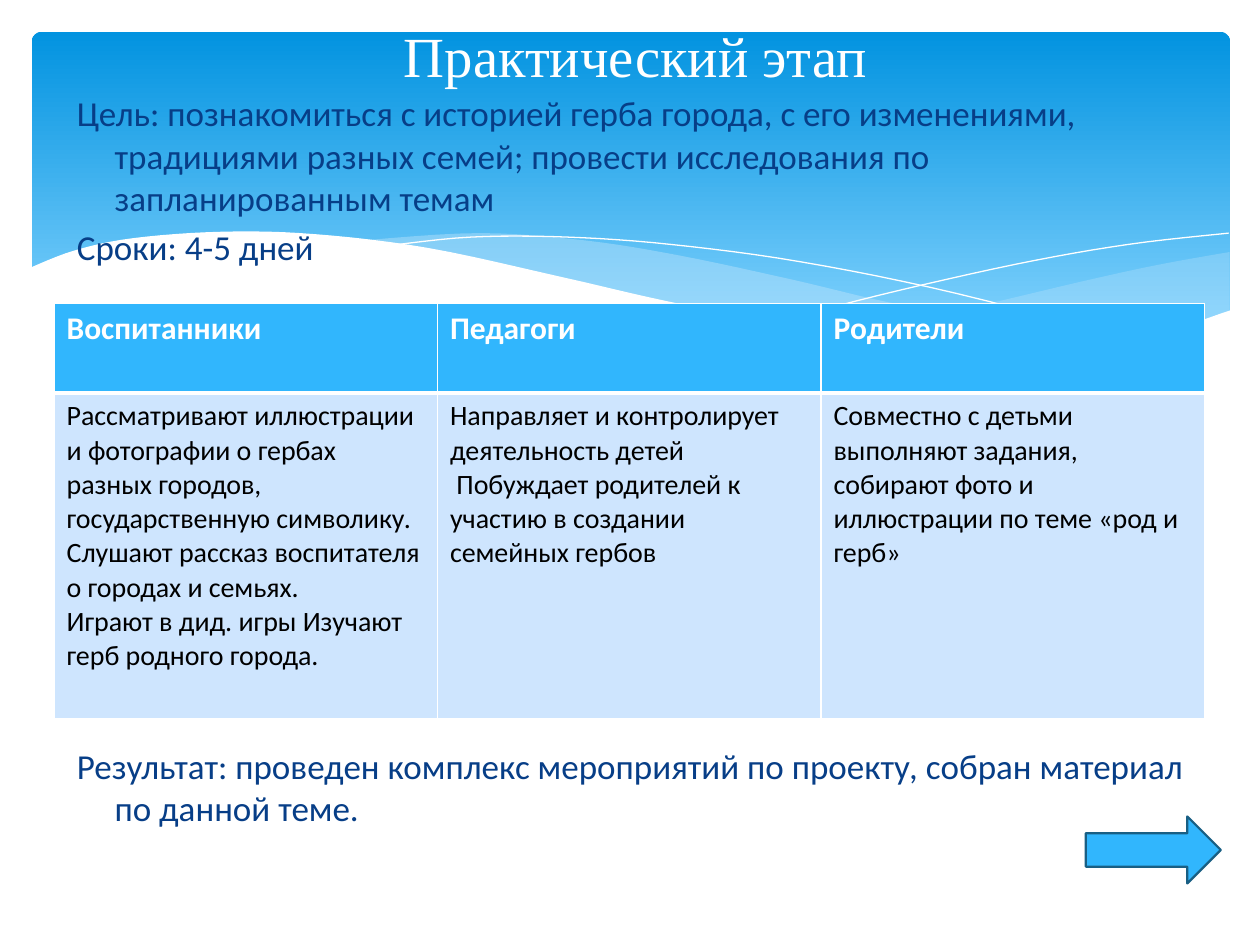
from lxml import etree
from pptx import Presentation
from pptx import util as u
from pptx.dml.color import RGBColor
from pptx.enum import shapes, text
from pptx.oxml.ns import qn

TITLE = "Практический этап"
GOALS = [
    "Цель: познакомиться с историей герба города, с его изменениями, традициями "
    "разных семей; провести исследования по запланированным темам",
    "Сроки: 4-5 дней",
]
RESULT = ["Результат: проведен комплекс мероприятий по проекту, "
          "собран материал по данной теме."]
ROLES = {
    "Воспитанники": [
        "Рассматривают иллюстрации и фотографии о гербах разных городов, "
        "государственную символику. Слушают рассказ воспитателя о городах и семьях.",
        "Играют в дид. игры Изучают герб родного города.",
    ],
    "Педагоги": [
        "Направляет и контролирует деятельность детей",
        " Побуждает родителей к участию в создании семейных гербов",
    ],
    "Родители": [
        "Совместно с детьми выполняют задания, собирают фото и иллюстрации "
        "по теме «род и герб»",
    ],
}
THEME = {
    "white": "FFFFFF", "black": "000000", "navy": "073E87",
    "accent": "31B6FD", "accent_dark": "195F84", "cell": "CEE5FE", "wave": "C6E7FC",
    "band_top": "0293E0", "band_bottom": "83D3FE",
    "title_font": "Times New Roman", "body_font": "Calibri",
    "title_size": 32.4, "body_size": 20, "header_size": 18, "cell_size": 16,
}

# Lengths in cm. Every wave is a chain of edges; each edge is a smooth curve.
BAND = (0.64, 0.64, 24.16, 6.86)
TITLE_BOX = (1.5, 0.41, 22.63, 2.39)
GOALS_BOX = (1.3, 1.73, 23.01, 4.2)
RESULT_BOX = (1.3, 14.89, 23.01, 2.2)
TABLE_BOX = (1.09, 6.12, 23.19, 8.36)
ROW_HEIGHTS = (1.8, 6.56)
ARROW = (21.89, 16.46, 2.72, 1.35)
HANGING = 0.76
WAVES = [
    {"fill": "wave", "alpha": 29, "edges": [
        [(24.79, 5.08), (23.39, 5.33), (21.87, 5.66), (19.13, 6.3), (16.79, 6.73)],
        [(16.79, 6.73), (17.91, 6.88), (19.53, 7.04), (20.93, 7.04), (22.38, 6.93),
         (23.75, 6.65), (24.79, 6.27)]]},
    {"fill": "wave", "alpha": 40, "edges": [
        [(22.68, 6.93), (20.5, 6.6), (17.93, 6.1), (15.98, 5.64), (13.74, 5.16),
         (11.81, 4.85), (9.65, 4.7), (7.26, 4.85)],
        [(7.26, 4.85), (9.19, 5.16), (11.4, 5.64), (14.38, 6.3), (16.89, 6.76),
         (19, 7.01), (20.78, 7.06), (22.68, 6.93)]]},
    {"line": "white", "edges": [
        [(7.85, 4.95), (9.5, 4.78), (11.43, 4.78), (13.54, 4.93), (16.15, 5.28),
         (19.3, 5.92), (23.04, 6.91)]]},
    {"line": "white", "edges": [
        [(15.57, 6.53), (17.65, 5.97), (20.47, 5.33), (22.73, 4.93), (24.77, 4.7)]]},
    {"fill": "white", "edges": [
        [(24.82, 6.25), (23.11, 6.78), (20.9, 7.04), (18.44, 6.91), (15.9, 6.55),
         (13.44, 6.07), (11.35, 5.59), (8.64, 5), (6.35, 4.72), (4.5, 4.67),
         (2.69, 4.8), (1.5, 5.05), (0.58, 5.41)],
        [(0.58, 8.36), (24.82, 8.36)]]},
]


def color(name):
    return RGBColor.from_string(THEME[name])


def cm(box):
    return [u.Cm(length) for length in box]


def set_values(target, values):
    for name, value in values.items():
        setattr(target, name, value)


def paint(shape, fill=None, line=None, width=0):
    shape.shadow.inherit = False
    if fill:
        shape.fill.solid()
        shape.fill.fore_color.rgb = color(fill)
    else:
        shape.fill.background()
    if line:
        shape.line.color.rgb = color(line)
        shape.line.width = u.Pt(width)
    else:
        shape.line.fill.background()


def write(frame, lines, font, size, ink, bold=False, **paragraph_format):
    for index, line in enumerate(lines):
        paragraph = frame.add_paragraph() if index else frame.paragraphs[0]
        run = paragraph.add_run()
        run.text = line
        set_values(run.font, {"name": THEME[font], "size": u.Pt(THEME[size]), "bold": bold})
        run.font.color.rgb = color(ink)
        set_values(paragraph, paragraph_format)


def smooth(points, steps=6):
    """Catmull-Rom curve through the points."""
    padded = [points[0], *points, points[-1]]
    curve = [points[0]]
    for a, b, c, d in zip(padded, padded[1:], padded[2:], padded[3:]):
        for step in range(1, steps + 1):
            t = step / steps
            curve.append(tuple(
                (2 * q + (r - p) * t + (2 * p - 5 * q + 4 * r - s) * t ** 2
                 + (3 * q - p - 3 * r + s) * t ** 3) / 2
                for p, q, r, s in zip(a, b, c, d)))
    return curve


def add_band(slide):
    band = slide.shapes.add_shape(shapes.MSO_SHAPE.ROUNDED_RECTANGLE, *cm(BAND))
    band.adjustments[0] = 0.03
    paint(band)
    band.fill.gradient()
    band.fill.gradient_angle = 270
    for stop, name, position in zip(band.fill.gradient_stops,
                                    ("band_top", "band_bottom"), (0, 0.9)):
        stop.color.rgb = color(name)
        stop.position = position


def add_wave(slide, edges, fill=None, line=None, alpha=100):
    points = [cm(point) for edge in edges for point in smooth(edge)]
    builder = slide.shapes.build_freeform(*points[0])
    builder.add_line_segments(points[1:], close=bool(fill))
    wave = builder.convert_to_shape()
    paint(wave, fill, line)
    if alpha < 100:
        ink = wave.fill._xPr.find(".//" + qn("a:srgbClr"))
        etree.SubElement(ink, qn("a:alpha"), val=str(alpha * 1000))


def add_body(slide, box, lines):
    frame = slide.shapes.add_textbox(*cm(box)).text_frame
    frame.word_wrap = True
    write(frame, lines, "body_font", "body_size", "navy")
    for index, paragraph in enumerate(frame.paragraphs):
        paragraph.space_before = u.Pt(4 if index else 0)
        properties = paragraph._p.get_or_add_pPr()
        properties.set("marL", str(u.Cm(HANGING)))
        properties.set("indent", str(-u.Cm(HANGING)))


def add_title(slide):
    title = slide.shapes.title
    set_values(title, dict(zip(("left", "top", "width", "height"), cm(TITLE_BOX))))
    set_values(title.text_frame, {
        "margin_top": 0, "word_wrap": True, "auto_size": text.MSO_AUTO_SIZE.NONE,
        "vertical_anchor": text.MSO_ANCHOR.TOP})
    write(title.text_frame, [TITLE], "title_font", "title_size", "white",
          alignment=text.PP_ALIGN.CENTER)
    slide.shapes._spTree.append(title._element)  # bring in front of the band


def set_borders(cell, widths):
    properties = cell._tc.get_or_add_tcPr()
    for index, (side, width) in enumerate(widths.items()):
        border = etree.Element(qn("a:ln" + side), w=str(u.Pt(width)))
        fill = etree.SubElement(border, qn("a:solidFill"))
        etree.SubElement(fill, qn("a:srgbClr"), val=THEME["white"])
        properties.insert(index, border)


def add_roles(slide):
    table = slide.shapes.add_table(2, len(ROLES), *cm(TABLE_BOX)).table
    set_values(table, {"first_row": False, "horz_banding": False})
    for row, height in zip(table.rows, ROW_HEIGHTS):
        row.height = u.Cm(height)
    for column, (role, tasks) in enumerate(ROLES.items()):
        table.columns[column].width = u.Cm(TABLE_BOX[2] / len(ROLES))
        styles = [([role], "header_size", "white", True, "accent", (1, 3)),
                  (tasks, "cell_size", "black", False, "cell", (3, 1))]
        for row, (lines, size, ink, bold, fill, (top, bottom)) in enumerate(styles):
            cell = table.cell(row, column)
            write(cell.text_frame, lines, "body_font", size, ink, bold)
            cell.fill.solid()
            cell.fill.fore_color.rgb = color(fill)
            set_borders(cell, {"L": 1, "R": 1, "T": top, "B": bottom})


def main():
    presentation = Presentation()
    set_values(presentation, {"slide_width": u.Cm(25.4), "slide_height": u.Cm(19.05)})
    slide = presentation.slides.add_slide(presentation.slide_layouts[5])
    add_band(slide)
    for wave in WAVES:
        add_wave(slide, **wave)
    add_body(slide, GOALS_BOX, GOALS)
    add_body(slide, RESULT_BOX, RESULT)
    add_title(slide)
    add_roles(slide)
    arrow = slide.shapes.add_shape(shapes.MSO_SHAPE.RIGHT_ARROW, *cm(ARROW))
    paint(arrow, "accent", "accent_dark", 1.25)
    presentation.save("out.pptx")


if __name__ == "__main__":
    main()
